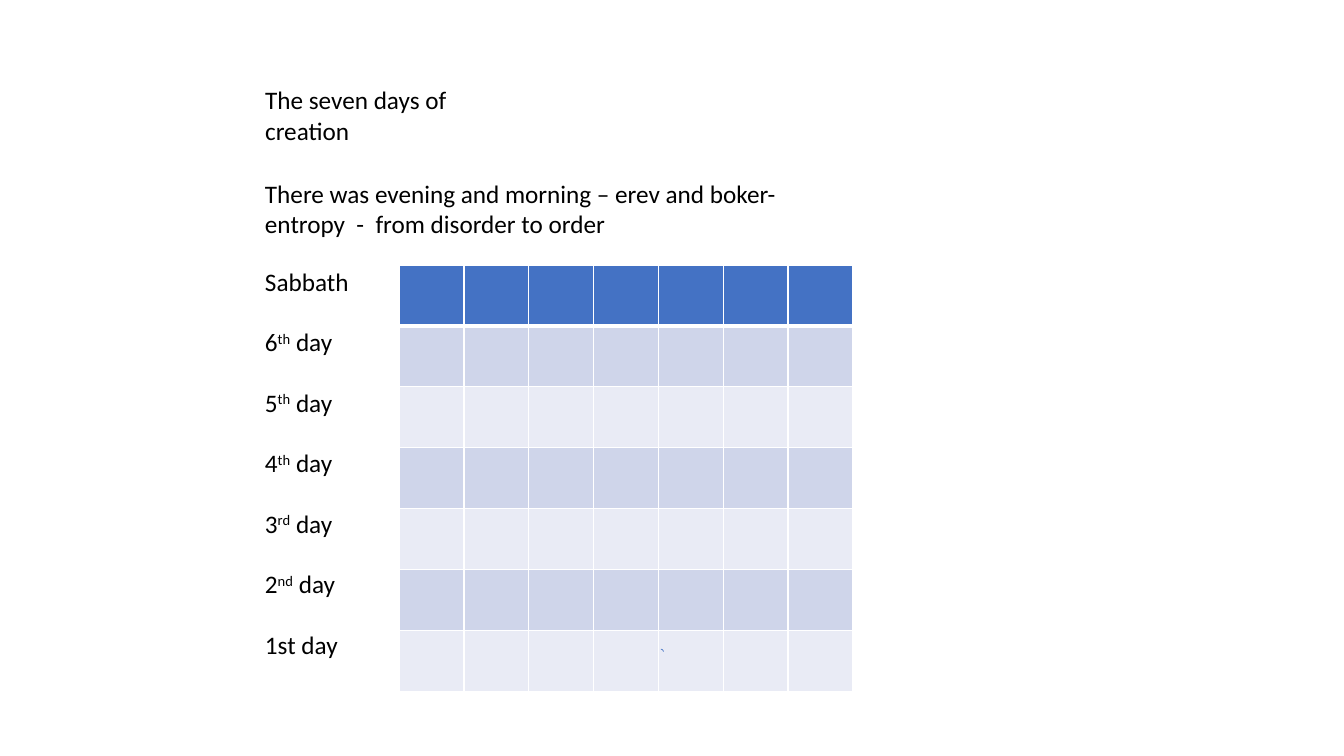
from lxml.etree import SubElement
from pptx import Presentation
from pptx.dml.color import RGBColor
from pptx.enum.shapes import MSO_SHAPE
from pptx.enum.text import MSO_ANCHOR, PP_ALIGN
from pptx.oxml.ns import qn
from pptx.util import Inches, Pt

TITLE = "The seven days of creation"
INTRO = "There was evening and morning – erev and boker- entropy  -  from disorder to order"
DAYS = [
    [("Sabbath", False)],
    *[[(number, False), (ordinal, True), (" day", False)]
      for number, ordinal in [("6", "th"), ("5", "th"), ("4", "th"), ("3", "rd"), ("2", "nd")]],
    [("1st day", False)],
]
BLACK, WHITE, BLUE = "000000", "FFFFFF", "4472C4"
BANDS = ["E9EBF5", "CFD5EA"]

ROWS, COLS = len(DAYS), 7
LEFT, TEXT_W = 2.53, 2.35
GRID_X, GRID_Y, GRID_W, GRID_H = 3.96, 2.63, 4.5, 4.23
GRID_RIGHT = GRID_X + GRID_W


def rgb(value):
    return RGBColor.from_string(value)


def box(x, y, w, h):
    return [Inches(v) for v in (x, y, w, h)]


def add_run(p, text, raised=False):
    r = p.add_run()
    r.text = text
    r.font.name, r.font.size = "Calibri", Pt(18)
    r.font.color.rgb = rgb(BLACK)
    if raised:
        r.font._element.set("baseline", "30000")


def write(sp, paragraphs, gap=0):
    tf = sp.text_frame
    tf.word_wrap = True
    tf.vertical_anchor = MSO_ANCHOR.TOP
    for i, runs in enumerate(paragraphs):
        p = tf.add_paragraph() if i else tf.paragraphs[0]
        p.alignment = PP_ALIGN.LEFT
        p.space_before, p.space_after = Pt(0), Pt(gap)
        for text, raised in runs:
            add_run(p, text, raised)


def set_borders(cell, widths):
    tcPr = cell._tc.get_or_add_tcPr()
    for i, (side, width) in enumerate(widths.items()):
        ln = SubElement(tcPr, qn(f"a:ln{side}"), w=str(Pt(width)))
        fill = SubElement(ln, qn("a:solidFill"))
        SubElement(fill, qn("a:srgbClr"), val=WHITE)
        tcPr.remove(ln)
        tcPr.insert(i, ln)


prs = Presentation()
prs.slide_width, prs.slide_height = Inches(13.33), Inches(7.5)
s = prs.slides.add_slide(prs.slide_layouts[5])

title = s.shapes.title
title.left, title.top, title.width, title.height = box(LEFT, 0.79, TEXT_W, 0.71)
write(title, [[(TITLE, False)]])

table = s.shapes.add_table(ROWS, COLS, *box(GRID_X, GRID_Y, GRID_W, GRID_H)).table
for col in table.columns:
    col.width = Inches(GRID_W / COLS)
for i, row in enumerate(table.rows):
    row.height = Inches(GRID_H / ROWS)
    for cell in row.cells:
        cell.fill.solid()
        cell.fill.fore_color.rgb = rgb(BANDS[i % 2] if i else BLUE)
        set_borders(cell, {"L": 1, "R": 1, "T": 3 if i == 1 else 1, "B": 1 if i else 3})

days = s.shapes.add_textbox(*box(LEFT, 2.59, GRID_X - LEFT, GRID_H))
write(days, DAYS, gap=21.6)

arc = s.shapes.add_shape(MSO_SHAPE.ARC, *box(6.53, 6.44, 0.05, 0.05))
arc.shadow.inherit = False
arc.fill.background()
arc.line.color.rgb = rgb(BLUE)
arc.line.width = Pt(0.5)

intro = s.shapes.add_textbox(*box(LEFT, 1.72, GRID_RIGHT - LEFT, 0.71))
write(intro, [[(INTRO, False)]])

prs.save("out.pptx")
